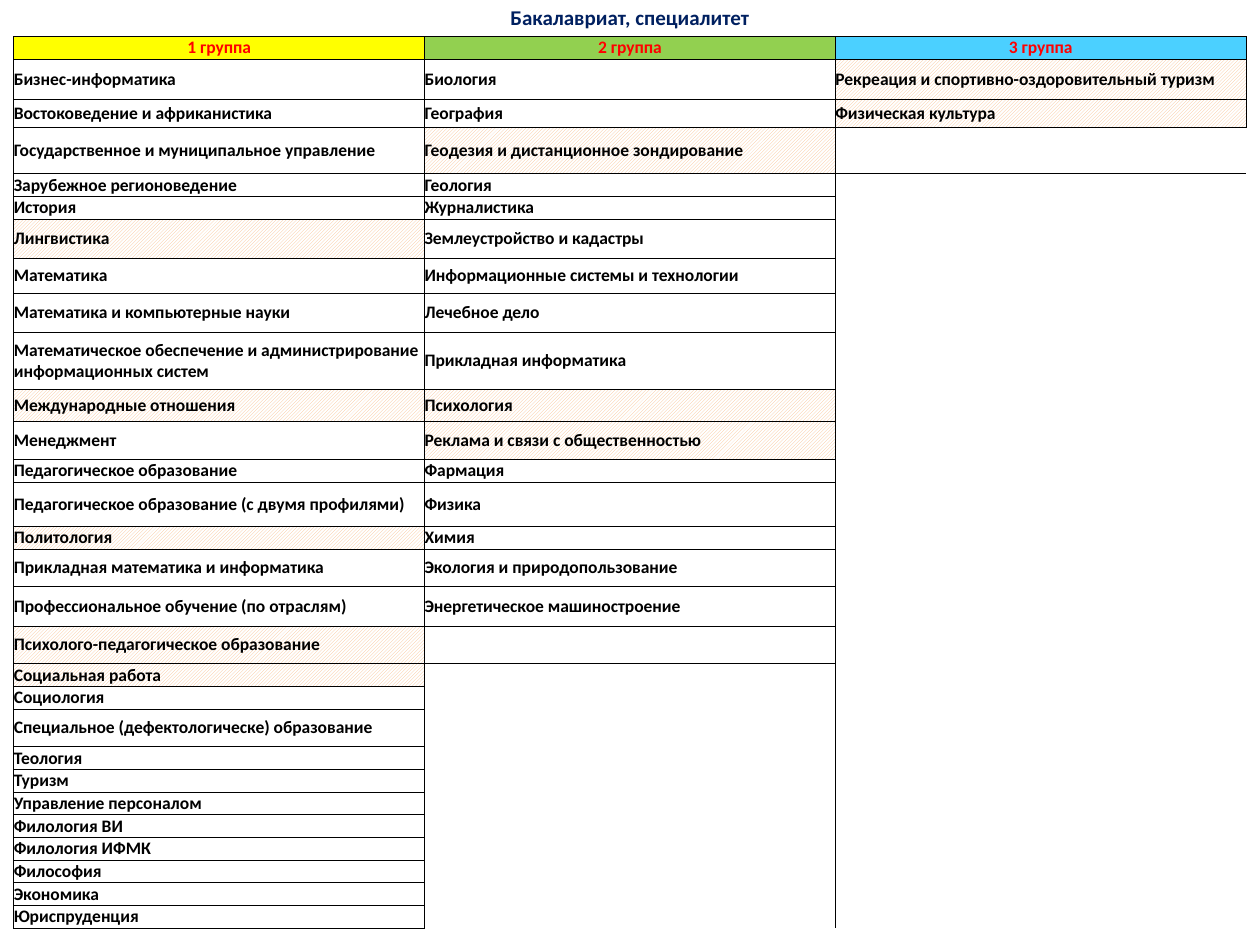
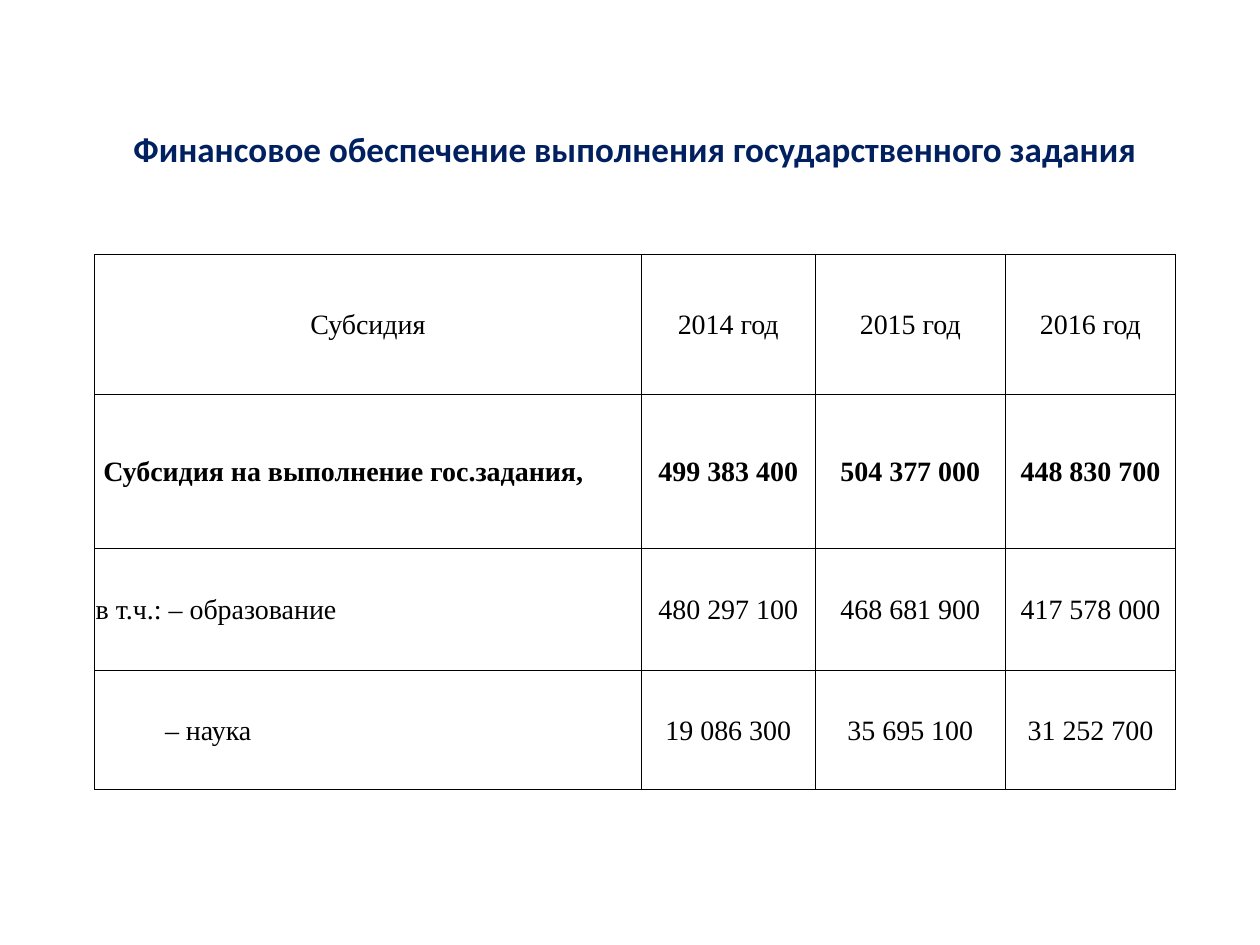
from dataclasses import dataclass
from itertools import zip_longest

from lxml.etree import SubElement
from pptx import Presentation
from pptx.dml.color import RGBColor
from pptx.enum.dml import MSO_PATTERN
from pptx.enum.text import MSO_ANCHOR, PP_ALIGN
from pptx.oxml.ns import qn
from pptx.util import Inches, Pt


@dataclass(frozen=True)
class Theme:
    heading: str = "002060"
    text: str = "000000"
    group_text: str = "FF0000"
    border: str = "000000"
    hatch: str = "FAC090"
    paper: str = "FFFFFF"
    sans: str = "Calibri"
    serif: str = "Times New Roman"
    list_title_size: int = 12
    list_size: int = 10
    finance_title_size: int = 20
    finance_size: int = 16
    spacer_size: int = 8
    border_width: float = 0.5


theme = Theme()
NO_STYLE_NO_GRID = "{2D5ABB26-0587-4C30-8999-92F81FD0307C}"
SIDES = {"a:lnL": (0, -1), "a:lnR": (0, 1), "a:lnT": (-1, 0), "a:lnB": (1, 0)}


def write_text(cell, text, size, font=theme.sans, color=theme.text, bold=False,
               align=PP_ALIGN.LEFT, inset=0, indent=0):
    cell.vertical_anchor = MSO_ANCHOR.MIDDLE
    cell.margin_left = Inches(inset + indent)
    cell.margin_right = cell.margin_top = Inches(inset)
    cell.margin_bottom = 0
    paragraph = cell.text_frame.paragraphs[0]
    paragraph.alignment = align
    if text:
        run = paragraph.add_run()
        run.text = text
        run.font.size = Pt(size)
        run.font.name = font
        run.font.bold = bold
        run.font.color.rgb = RGBColor.from_string(color)
    # An empty cell takes its line height from the end of its paragraph.
    SubElement(paragraph._p, qn("a:endParaRPr"), sz=str(size * 100))


def add_grid(slide, left, top, widths, heights, boxed):
    """Add a plain table with a merged first row; draw each side of the boxed cells."""
    frame = slide.shapes.add_table(len(heights), len(widths), Inches(left), Inches(top),
                                   Inches(sum(widths)), Inches(sum(heights)))
    table = frame.table
    table.first_row = table.horz_banding = False
    table._tbl.tblPr.find(qn("a:tableStyleId")).text = NO_STYLE_NO_GRID
    for column, width in zip(table.columns, widths):
        column.width = Inches(width)
    for row, height in zip(table.rows, heights):
        row.height = Inches(height)
    table.cell(0, 0).merge(table.cell(0, len(widths) - 1))
    for row in range(len(heights)):
        for column in range(len(widths)):
            cell = table.cell(row, column)
            properties = cell._tc.get_or_add_tcPr()
            for side, (down, across) in SIDES.items():
                if {(row, column), (row + down, column + across)} & boxed:
                    line = SubElement(properties, qn(side), w=str(Pt(theme.border_width)))
                    fill = SubElement(line, qn("a:solidFill"))
                    SubElement(fill, qn("a:srgbClr"), val=theme.border)
            cell.fill.background()
    return table


presentation = Presentation()
presentation.slide_width = Inches(10)
presentation.slide_height = Inches(7.5)
blank_layout = presentation.slide_layouts[6]

# Slide 1: study programmes by group
groups = {
    "1 группа": ("FFFF00", [
        "Бизнес-информатика", "Востоковедение и африканистика",
        "Государственное и муниципальное управление", "Зарубежное регионоведение",
        "История", "Лингвистика", "Математика", "Математика и компьютерные науки",
        "Математическое обеспечение и администрирование информационных систем",
        "Международные отношения", "Менеджмент", "Педагогическое образование",
        "Педагогическое образование (с двумя профилями)", "Политология",
        "Прикладная математика и информатика", "Профессиональное обучение (по отраслям)",
        "Психолого-педагогическое образование", "Социальная работа", "Социология",
        "Специальное (дефектологическе) образование", "Теология", "Туризм",
        "Управление персоналом", "Филология ВИ", "Филология ИФМК", "Философия",
        "Экономика", "Юриспруденция"]),
    "2 группа": ("92D050", [
        "Биология", "География", "Геодезия и дистанционное зондирование", "Геология",
        "Журналистика", "Землеустройство и кадастры",
        "Информационные системы и технологии", "Лечебное дело", "Прикладная информатика",
        "Психология", "Реклама и связи с общественностью", "Фармация", "Физика", "Химия",
        "Экология и природопользование", "Энергетическое машиностроение"]),
    "3 группа": ("4BD0FF", [
        "Рекреация и спортивно-оздоровительный туризм", "Физическая культура"]),
}
hatched = {
    "Лингвистика", "Международные отношения", "Политология",
    "Психолого-педагогическое образование", "Социальная работа",
    "Геодезия и дистанционное зондирование", "Психология",
    "Реклама и связи с общественностью",
    "Рекреация и спортивно-оздоровительный туризм", "Физическая культура",
}
programme_rows = list(zip_longest(*(names for _, names in groups.values()), fillvalue=""))
single_line = 0.18
row_heights = [0.29] + [single_line] * (len(programme_rows) + 1)
taller_rows = {2: 0.32, 3: 0.22, 4: 0.37, 7: 0.31, 8: 0.28, 9: 0.31, 10: 0.45, 11: 0.26,
               12: 0.3, 14: 0.35, 16: 0.3, 17: 0.31, 18: 0.3, 21: 0.3}
for row, height in taller_rows.items():
    row_heights[row] = height

slide = presentation.slides.add_slide(blank_layout)
boxed = {(row, column) for row, names in enumerate([tuple(groups), *programme_rows], 1)
         for column, name in enumerate(names) if name}
table = add_grid(slide, 0.11, 0, [3.26] * len(groups), row_heights, boxed)
write_text(table.cell(0, 0), "Бакалавриат, специалитет", theme.list_title_size,
           color=theme.heading, bold=True, align=PP_ALIGN.CENTER)
for column, (group, (color, _)) in enumerate(groups.items()):
    cell = table.cell(1, column)
    write_text(cell, group, theme.list_size, color=theme.group_text, bold=True,
               align=PP_ALIGN.CENTER)
    cell.fill.solid()
    cell.fill.fore_color.rgb = RGBColor.from_string(color)
for row, names in enumerate(programme_rows, 2):
    for column, name in enumerate(names):
        cell = table.cell(row, column)
        write_text(cell, name, theme.list_size, bold=True)
        if name in hatched:
            cell.fill.patterned()
            cell.fill.pattern = MSO_PATTERN.LIGHT_UPWARD_DIAGONAL
            cell.fill.fore_color.rgb = RGBColor.from_string(theme.hatch)
            cell.fill.back_color.rgb = RGBColor.from_string(theme.paper)

# Slide 2: subsidies by year
subsidies = [
    ("Субсидия", "2014 год", "2015 год", "2016 год"),
    ("Субсидия на выполнение гос.задания,", "499 383 400", "504 377 000", "448 830 700"),
    ("в т.ч.: – образование", "480 297 100", "468 681 900", "417 578 000"),
    ("– наука", "19 086 300", "35 695 100", "31 252 700"),
]
label_indents = [0, 0.06, 0, 0.55]
header_index, total_index = 0, 1
first_row = 2
cell_inset = 0.01

slide = presentation.slides.add_slide(blank_layout)
boxed = {(row + first_row, column) for row, values in enumerate(subsidies)
         for column in range(len(values))}
table = add_grid(slide, 0.75, 0.6, [4.34, 1.38, 1.51, 1.35],
                 [1.18, 0.24, 1.11, 1.22, 0.97, 0.95], boxed)
write_text(table.cell(0, 0), "Финансовое обеспечение выполнения государственного задания",
           theme.finance_title_size, color=theme.heading, bold=True,
           align=PP_ALIGN.CENTER, inset=cell_inset)
for column in range(len(subsidies[0])):
    write_text(table.cell(1, column), "", theme.spacer_size)
for index, (values, indent) in enumerate(zip(subsidies, label_indents)):
    for column, value in enumerate(values):
        is_label = column == 0 and index != header_index
        write_text(table.cell(index + first_row, column), value, theme.finance_size,
                   font=theme.serif, bold=index == total_index,
                   align=PP_ALIGN.LEFT if is_label else PP_ALIGN.CENTER,
                   inset=cell_inset, indent=indent if is_label else 0)

presentation.save("out.pptx")
